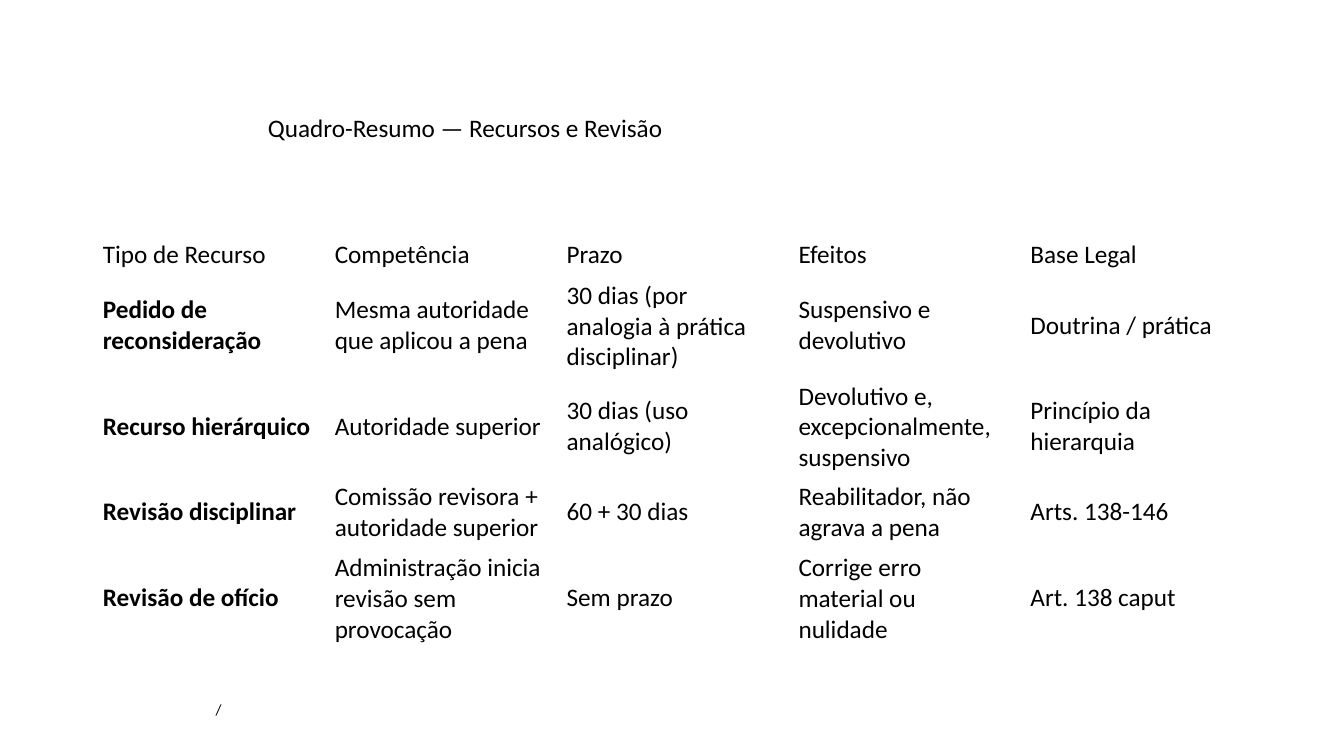
"""Builds the summary slide on appeals and review."""
from pptx import Presentation, util as u
from pptx.dml.color import RGBColor
from pptx.enum import text

BLACK = RGBColor(0, 0, 0)
FONT = "Calibri"
WIDE, HIGH = 13.33, 7.5

NOTES = [
    ("Quadro-Resumo — Recursos e Revisão", 18, (2.56, 1.07, 6.67, 0.4)),
    ("/", 11, (2.04, 6.9, 9.25, 0.29)),
]
ROWS = [
    ("Tipo de Recurso", "Competência", "Prazo", "Efeitos", "Base Legal"),
    ("Pedido de reconsideração", "Mesma autoridade que aplicou a pena",
     "30 dias (por analogia à prática disciplinar)",
     "Suspensivo e devolutivo", "Doutrina / prática"),
    ("Recurso hierárquico", "Autoridade superior", "30 dias (uso analógico)",
     "Devolutivo e, excepcionalmente, suspensivo", "Princípio da hierarquia"),
    ("Revisão disciplinar", "Comissão revisora + autoridade superior",
     "60 + 30 dias", "Reabilitador, não agrava a pena", "Arts. 138-146"),
    ("Revisão de ofício", "Administração inicia revisão sem provocação",
     "Sem prazo", "Corrige erro material ou nulidade", "Art. 138 caput"),
]
LINES = [1, 3, 3, 2, 3]
LEFT, TOP, COL = 0.92, 2.33, 2.3
LINE, PAD = 0.3, 0.1


def write(frame, words, size, bold=False):
    frame.word_wrap = True
    run = frame.paragraphs[0].add_run()
    run.text = words
    font = run.font
    font.name, font.size, font.bold = FONT, u.Pt(size), bold
    font.color.rgb = BLACK


def main():
    deck = Presentation()
    deck.slide_width, deck.slide_height = u.Inches(WIDE), u.Inches(HIGH)
    slide = deck.slides.add_slide(deck.slide_layouts[6])

    for words, size, place in NOTES:
        box = slide.shapes.add_textbox(*map(u.Inches, place))
        write(box.text_frame, words, size)

    tall = [PAD + LINE * count for count in LINES]
    wide = len(ROWS[0])
    area = (LEFT, TOP, COL * wide, sum(tall))
    grid = slide.shapes.add_table(len(ROWS), wide, *map(u.Inches, area)).table
    grid.first_row = grid.horz_banding = False
    for r, row in enumerate(ROWS):
        grid.rows[r].height = u.Inches(tall[r])
        for c, words in enumerate(row):
            cell = grid.cell(r, c)
            cell.fill.background()
            cell.vertical_anchor = text.MSO_ANCHOR.MIDDLE
            write(cell.text_frame, words, 18, r > 0 and c == 0)

    deck.save("out.pptx")


if __name__ == "__main__":
    main()
